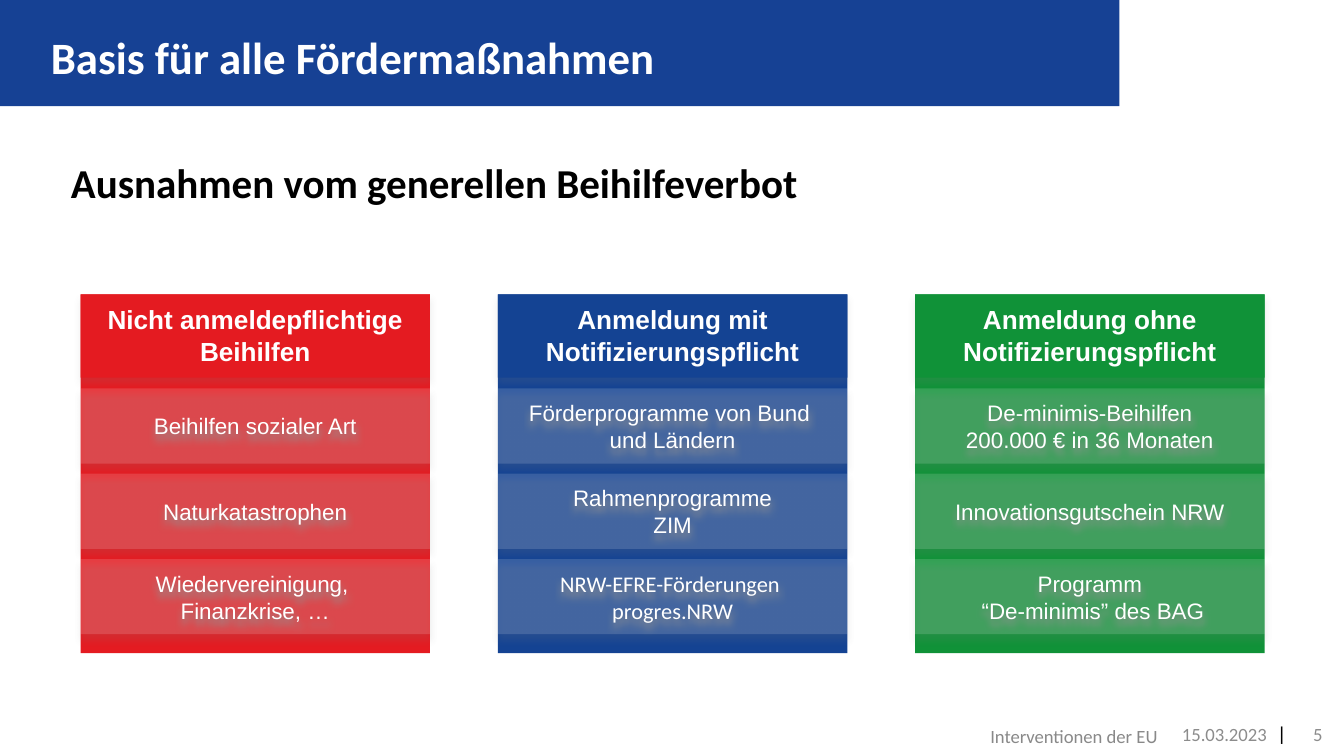
from lxml.etree import SubElement
from pptx import Presentation
from pptx.dml.color import RGBColor
from pptx.enum.shapes import MSO_SHAPE
from pptx.enum.text import MSO_ANCHOR, PP_ALIGN
from pptx.oxml.ns import qn
from pptx.util import Inches, Pt

BANNER_BLUE = RGBColor(0x16, 0x41, 0x94)
RED = RGBColor(0xE4, 0x1B, 0x21)
BLUE = RGBColor(0x14, 0x43, 0x93)
GREEN = RGBColor(0x10, 0x92, 0x38)
WHITE = RGBColor(0xFF, 0xFF, 0xFF)
BLACK = RGBColor(0, 0, 0)
GRAY = RGBColor(0x8C, 0x8C, 0x8C)
DARK_GRAY = RGBColor(0x89, 0x89, 0x89)

# 16:9 slide
SLIDE_WIDTH = 10
SLIDE_HEIGHT = SLIDE_WIDTH * 9 / 16

# Column grid, spaced evenly between first and last position
LEFT, LAST_LEFT, TOP = 0.6, 6.81, 2.19
COLUMN_WIDTH, COLUMN_HEIGHT, HEADER_HEIGHT = 2.6, 2.67, 0.62
COLUMN_STEP = (LAST_LEFT - LEFT) / 2
ITEM_TOP, LAST_ITEM_TOP, ITEM_HEIGHT = 2.89, 4.16, 0.56
ITEM_STEP = (LAST_ITEM_TOP - ITEM_TOP) / 2

DEFAULT_INSETS = (0.1, 0.05, 0.1, 0.05)
BOX_INSETS = (0.1, 0.07, 0.1, 0.07)
FOOTER_INSETS = (0.04, 0.04, 0.04, 0.08)
NUMBER_INSETS = (0, 0.04, 0.12, 0.08)

HEADER_FORMAT = {"name": "Arial", "size": Pt(14), "bold": True}
ITEM_FORMAT = {"name": "Arial", "size": Pt(12)}
CALIBRI_ITEM_FORMAT = {"name": "Calibri", "size": Pt(12)}
TITLE_FORMAT = {"name": "Calibri", "size": Pt(24), "bold": True}
SUBTITLE_FORMAT = {"name": "Calibri", "size": Pt(22), "bold": True}
FOOTER_FORMAT = {"name": "Calibri", "size": Pt(10)}
DIVIDER_FORMAT = {"name": "Arial", "size": Pt(10)}

# Fill, heading, and items with their formats; \v is a line break
COLUMNS = [
    (RED, "Nicht anmeldepflichtige Beihilfen", [
        ("Beihilfen sozialer Art", ITEM_FORMAT),
        ("Naturkatastrophen", ITEM_FORMAT),
        ("Wiedervereinigung, \vFinanzkrise, …", ITEM_FORMAT)]),
    (BLUE, "Anmeldung mit Notifizierungspflicht", [
        ("Förderprogramme von Bund \vund Ländern", ITEM_FORMAT),
        ("Rahmenprogramme\vZIM", ITEM_FORMAT),
        ("NRW-EFRE-Förderungen \vprogres.NRW", CALIBRI_ITEM_FORMAT)]),
    (GREEN, "Anmeldung ohne Notifizierungspflicht", [
        ("De-minimis-Beihilfen\v200.000 € in 36 Monaten", ITEM_FORMAT),
        ("Innovationsgutschein NRW", ITEM_FORMAT),
        ("Programm\v “De-minimis” des BAG", ITEM_FORMAT)]),
]


def write_text(shape, text, font_format, color, align, insets, anchor):
    frame = shape.text_frame
    left, top, right, bottom = map(Inches, insets)
    frame_format = {"word_wrap": True, "vertical_anchor": anchor,
                    "margin_left": left, "margin_top": top,
                    "margin_right": right, "margin_bottom": bottom}
    for name, value in frame_format.items():
        setattr(frame, name, value)
    paragraph = frame.paragraphs[0]
    paragraph.text = text
    paragraph.alignment = align
    for name, value in font_format.items():
        setattr(paragraph.font, name, value)
    paragraph.font.color.rgb = color


def add_text(slide, box, text, font_format, color, align=PP_ALIGN.LEFT,
             insets=DEFAULT_INSETS, anchor=MSO_ANCHOR.MIDDLE):
    shape = slide.shapes.add_textbox(*map(Inches, box))
    write_text(shape, text, font_format, color, align, insets, anchor)
    return shape


def add_rectangle(slide, box, color):
    shape = slide.shapes.add_shape(MSO_SHAPE.RECTANGLE, *map(Inches, box))
    shape.shadow.inherit = False
    shape.fill.solid()
    shape.fill.fore_color.rgb = color
    shape.line.fill.background()
    return shape


def add_alpha(color_element, percent):
    SubElement(color_element, qn("a:alpha"), val=str(percent * 1000))


def add_shadow(shape):
    effects = shape.element.spPr.find(qn("a:effectLst"))
    shadow = SubElement(effects, qn("a:outerShdw"), blurRad=str(Pt(4)),
                        dist=str(Pt(3)), dir="5400000", rotWithShape="0")
    add_alpha(SubElement(shadow, qn("a:srgbClr"), val="808080"), 15)


def add_label_box(slide, box, color, text, font_format, anchor):
    shape = add_rectangle(slide, box, color)
    add_shadow(shape)
    write_text(shape, text, font_format, WHITE, PP_ALIGN.CENTER,
               BOX_INSETS, anchor)
    return shape


def add_column(slide, left, color, heading, items):
    add_rectangle(slide, (left, TOP, COLUMN_WIDTH, COLUMN_HEIGHT), color)
    add_label_box(slide, (left, TOP, COLUMN_WIDTH, HEADER_HEIGHT),
                  color, heading, HEADER_FORMAT, MSO_ANCHOR.TOP)
    for row, (text, font_format) in enumerate(items):
        box = (left, ITEM_TOP + row * ITEM_STEP, COLUMN_WIDTH, ITEM_HEIGHT)
        item = add_label_box(slide, box, WHITE, text, font_format,
                             MSO_ANCHOR.MIDDLE)
        solid_fill = item.element.spPr.find(qn("a:solidFill"))
        add_alpha(solid_fill.find(qn("a:srgbClr")), 15)


def add_footer(slide):
    add_text(slide, (4.06, 5.33, 4.65, 0.3), "Interventionen der EU",
             FOOTER_FORMAT, DARK_GRAY, PP_ALIGN.RIGHT)
    add_text(slide, (8.73, 5.33, 0.76, 0.3), "15.03.2023",
             FOOTER_FORMAT, GRAY, PP_ALIGN.CENTER, FOOTER_INSETS)
    divider = add_text(slide, (9.48, 5.33, 0.12, 0.29), "|", DIVIDER_FORMAT,
                       BLACK, insets=FOOTER_INSETS, anchor=MSO_ANCHOR.TOP)
    divider.text_frame.word_wrap = False
    add_text(slide, (9.57, 5.33, 0.39, 0.3), "5",
             FOOTER_FORMAT, GRAY, PP_ALIGN.RIGHT, NUMBER_INSETS)


def main():
    presentation = Presentation()
    presentation.slide_width = Inches(SLIDE_WIDTH)
    presentation.slide_height = Inches(SLIDE_HEIGHT)
    slide = presentation.slides.add_slide(presentation.slide_layouts[6])

    # Banner and headings
    add_rectangle(slide, (0, 0, 8.33, 0.79), BANNER_BLUE)
    add_text(slide, (0.28, 0.14, 7.48, 0.56),
             "Basis für alle Fördermaßnahmen", TITLE_FORMAT, WHITE)
    add_text(slide, (0.43, 0.92, 9.13, 0.87),
             "Ausnahmen vom generellen Beihilfeverbot", SUBTITLE_FORMAT, BLACK)

    # Three columns of exceptions
    for index, (color, heading, items) in enumerate(COLUMNS):
        add_column(slide, LEFT + index * COLUMN_STEP, color, heading, items)

    add_footer(slide)
    presentation.save("out.pptx")


if __name__ == "__main__":
    main()
